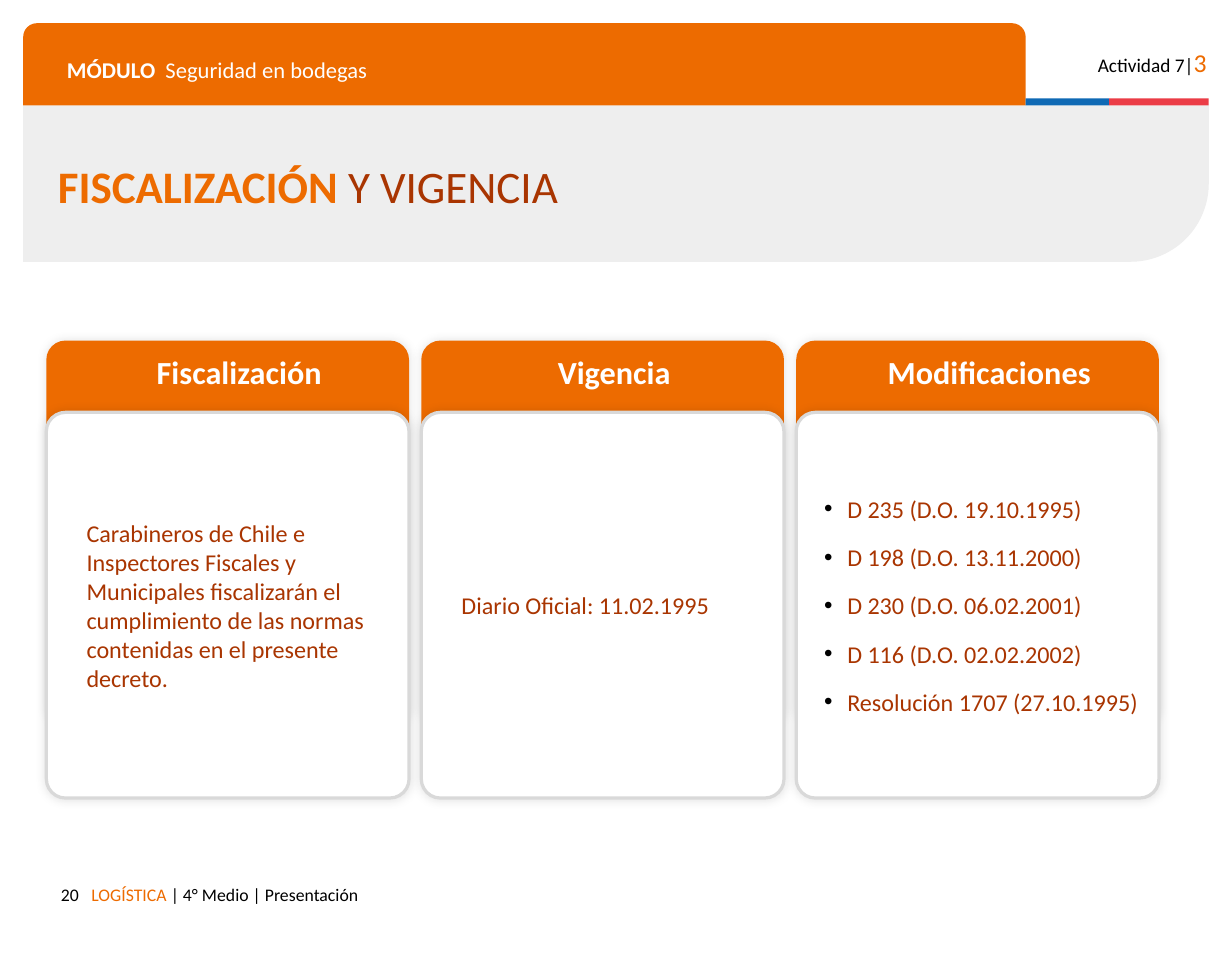
import lxml.etree
import pptx
import pptx.dml.color
import pptx.enum.shapes
import pptx.enum.text
import pptx.oxml
import pptx.oxml.ns
import pptx.util

Inches = pptx.util.Inches
Pt = pptx.util.Pt
SHAPE = pptx.enum.shapes.MSO_SHAPE
ALIGN = pptx.enum.text.PP_ALIGN
ANCHOR = pptx.enum.text.MSO_ANCHOR
qn = pptx.oxml.ns.qn

COLORS = {
    "orange": "ED6B00", "rust": "A93501", "white": "FFFFFF", "black": "000000",
    "gray": "EEEEEE", "edge": "D9D9D9", "blue": "0F69B4", "red": "EB3C46",
}
RULE = ("Carabineros de Chile e Inspectores Fiscales y Municipales fiscalizarán "
        "el cumplimiento de las normas contenidas en el presente decreto.")
CARDS = [("Fiscalización", RULE), ("Vigencia", "Diario Oficial: 11.02.1995"),
         ("Modificaciones", "")]
CHANGES = ["D 235 (D.O. 19.10.1995)", "D 198 (D.O. 13.11.2000)",
           "D 230 (D.O. 06.02.2001)", "D 116 (D.O. 02.02.2002)",
           "Resolución 1707 (27.10.1995)"]
LEFT, STEP, SIDE, TALL = 0.4, 3.235, 3.13, 3.33
HEAD_TOP, CARD_TOP = 2.94, 3.56


def color(name):
    return pptx.dml.color.RGBColor.from_string(COLORS[name])


def place(shape, left, top, width, height):
    shape.left, shape.top = Inches(left), Inches(top)
    shape.width, shape.height = Inches(width), Inches(height)


def style(para, size, tint, bold=False):
    font = para.font
    font.name, font.size, font.bold = "Calibri", Pt(size), bold
    font.color.rgb = color(tint)


def add_block(slide, kind, box, fill, *adjust):
    shape = slide.shapes.add_shape(kind, *map(Inches, box))
    shape.shadow.inherit = False
    shape.fill.solid()
    shape.fill.fore_color.rgb = color(fill)
    shape.line.fill.background()
    for index, value in enumerate(adjust):
        shape.adjustments[index] = value
    return shape


def write_runs(para, size, runs):
    """Write runs given as (text, colour, changes to the font)."""
    para.font.name, para.font.size = "Calibri", Pt(size)
    for text, tint, changes in runs:
        run = para.add_run()
        run.text = text
        run.font.color.rgb = color(tint)
        for key, value in changes.items():
            setattr(run.font, key, value)


def set_frame(frame, anchor=ANCHOR.TOP):
    frame.word_wrap = True
    frame.auto_size = pptx.enum.text.MSO_AUTO_SIZE.NONE
    frame.vertical_anchor = anchor
    frame.margin_left = frame.margin_right = Inches(0.1)
    frame.margin_top = frame.margin_bottom = Inches(0.1)


def add_label(slide, box, size, runs, align=ALIGN.LEFT):
    frame = slide.shapes.add_textbox(*map(Inches, box)).text_frame
    set_frame(frame)
    para = frame.paragraphs[0]
    para.alignment = align
    write_runs(para, size, runs)
    return para


def add_glow(shape):
    """Put a soft, even shadow around a shape."""
    effects = shape._element.spPr.find(qn("a:effectLst"))
    glow = lxml.etree.SubElement(effects, qn("a:outerShdw"), blurRad=str(Pt(6)),
                                 dist="0", dir="0", algn="ctr", rotWithShape="0")
    shade = lxml.etree.SubElement(glow, qn("a:srgbClr"), val=COLORS["black"])
    lxml.etree.SubElement(shade, qn("a:alpha"), val="11000")


def add_panel(slide, left, top, fill, text, anchor, align, font):
    box = (left, top, SIDE, TALL)
    panel = add_block(slide, SHAPE.ROUNDED_RECTANGLE, box, fill, 0.053)
    add_glow(panel)
    if text:
        frame = panel.text_frame
        frame.word_wrap = True
        frame.vertical_anchor = anchor
        para = frame.paragraphs[0]
        para.text, para.alignment = text, align
        para._p.get_or_add_pPr().set("marL", str(Inches(0.2)))
        style(para, *font)
    return panel


def add_header(slide):
    band = add_block(slide, SHAPE.ROUND_1_RECTANGLE, (0.2, 0.91, 10.23, 1.35), "gray", 0.5)
    band.rotation = 180
    band._element.spPr.xfrm.set("flipH", "1")
    add_block(slide, SHAPE.ROUND_2_SAME_RECTANGLE, (0.2, 0.2, 8.65, 0.71), "orange", 0.167, 0)
    add_block(slide, SHAPE.RECTANGLE, (8.85, 0.85, 0.72, 0.06), "blue")
    add_block(slide, SHAPE.RECTANGLE, (9.57, 0.85, 0.86, 0.06), "red")
    add_label(slide, (9.23, 0.3, 1.28, 0.38), 12,
              [("Actividad 7|", "black", {}), ("3", "orange", {"size": Pt(16)})], ALIGN.RIGHT)
    module = add_label(slide, (0.48, 0.38, 8.14, 0.35), 14, [])
    tabs = lxml.etree.SubElement(module._p.get_or_add_pPr(), qn("a:tabLst"))
    lxml.etree.SubElement(tabs, qn("a:tab"), pos=str(Inches(0.85)), algn="l")
    tabs.getparent().insert(0, tabs)
    write_runs(module, 14, [("MÓDULO\t", "white", {"bold": True}),
                            ("Seguridad en bodegas", "white", {})])


def add_footer(slide):
    add_label(slide, (0.69, 7.53, 7.14, 0.38), 11,
              [("LOGÍSTICA ", "orange", {}), ("| 4° Medio | Presentación", "black", {})])
    add_label(slide, (0.2, 7.53, 0.58, 0.29), 11, [("20", "black", {})], ALIGN.RIGHT)


def fill_title(slide):
    title = slide.shapes.title
    place(title, 0.4, 1.47, 5.89, 0.35)
    set_frame(title.text_frame, ANCHOR.MIDDLE)
    para = title.text_frame.paragraphs[0]
    para.alignment, para.line_spacing = ALIGN.LEFT, 0.8
    write_runs(para, 28, [("FISCALIZACIÓN ", "orange", {"bold": True}),
                          ("Y VIGENCIA", "rust", {})])
    slide.shapes._spTree.append(title._element)


def fill_list(slide, left):
    body = slide.placeholders[1]
    place(body, left + 0.05, CARD_TOP, SIDE - 0.1, TALL)
    frame = body.text_frame
    set_frame(frame, ANCHOR.MIDDLE)
    frame.text = "\n".join(CHANGES)
    for para in frame.paragraphs:
        props = para._p.get_or_add_pPr()
        props.set("marL", str(Inches(0.29)))
        props.set("indent", str(Inches(-0.2)))
        tint = lxml.etree.SubElement(props, qn("a:buClr"))
        lxml.etree.SubElement(tint, qn("a:srgbClr"), val=COLORS["black"])
        lxml.etree.SubElement(props, qn("a:buFont"), typeface="Arial")
        lxml.etree.SubElement(props, qn("a:buChar"), char="•")
        para.space_before, para.space_after = Pt(0), Pt(12)
        style(para, 15, "rust")
    slide.shapes._spTree.append(body._element)


def main():
    deck = pptx.Presentation()
    deck.slide_width, deck.slide_height = Inches(10.63), Inches(8.27)
    slide = deck.slides.add_slide(deck.slide_layouts[1])
    add_header(slide)
    add_footer(slide)
    fill_title(slide)
    for index, (head, text) in enumerate(CARDS):
        left = LEFT + index * STEP
        add_panel(slide, left, HEAD_TOP, "orange", head, ANCHOR.TOP, ALIGN.CENTER,
                  (20, "white", True))
        card = add_panel(slide, left, CARD_TOP, "white", text, ANCHOR.MIDDLE, ALIGN.LEFT,
                         (15, "rust"))
        card.line.color.rgb = color("edge")
        card.line.width = Pt(2)
    fill_list(slide, left)
    deck.save("out.pptx")


if __name__ == "__main__":
    main()
